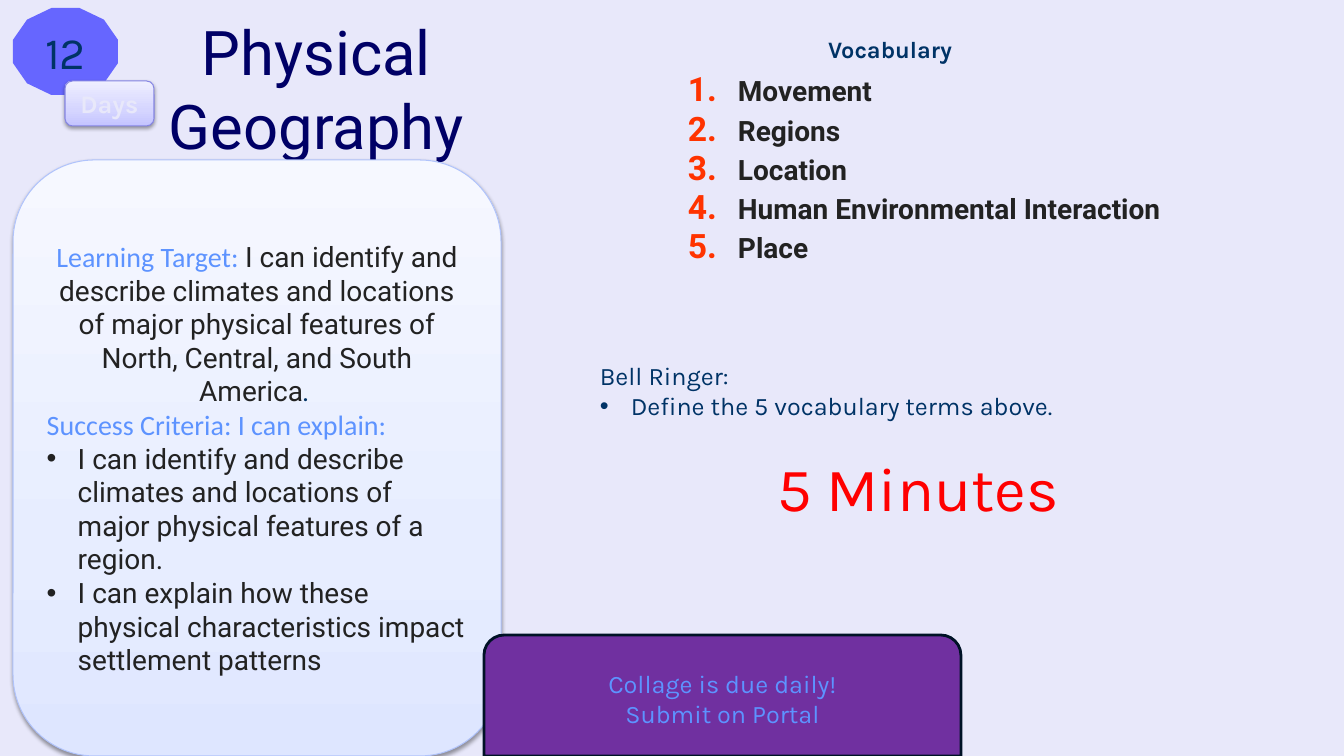
from lxml import etree
from pptx import Presentation
from pptx import util as u
from pptx.dml.color import RGBColor
from pptx.enum import shapes, text
from pptx.oxml.ns import qn

PX = 914400 / 100.8
SLIDE = (1344, 756)
NAVY, BLUE, INK, RED = "003366", "5D93FF", "222222", "FF0000"
CENTER, LEFT = text.PP_ALIGN.CENTER, text.PP_ALIGN.LEFT
TOP, MIDDLE, BOTTOM = (text.MSO_ANCHOR.TOP, text.MSO_ANCHOR.MIDDLE,
                       text.MSO_ANCHOR.BOTTOM)
DOT = {"indent": 31, "tags": [("buFont", {"typeface": "Arial"}), ("buChar", {"char": "•"})]}
NUMBER = {"indent": 50, "color": "FF3300",
          "tags": [("buSzPct", {"val": "120000"}), ("buFont", {"typeface": "+mj-lt"}),
                   ("buAutoNum", {"type": "arabicPeriod"})]}

# A run is (text, size, font, colour, bold); a paragraph is
# (runs, alignment, space before in points, bullet).
TITLE = [([("Physical Geography", 44, "Roboto", "000066", False)], CENTER, 0, None)]
DAY_COUNT = [([("12", 32, "Karla", NAVY, False)], CENTER, 0, None)]
DAYS = [([("Days", 18, "Karla", "E8E8FA", True)], CENTER, 0, None)]
VOCABULARY = [([("Vocabulary", 16.8, "Karla", NAVY, True)], CENTER, 3, None)]
TERMS = [([(term, 20, "Roboto", INK, True)], LEFT, 4, NUMBER)
         for term in ("Movement", "Regions", "Location",
                      "Human Environmental Interaction", "Place")]
GOALS = [
    ([("Learning Target: ", 20, "Calibri", BLUE, False),
      ("I can identify and describe climates and locations of major physical "
       "features of North, Central, and South America", 20, "Roboto", INK, False),
      (". ", 20, "Karla", NAVY, False)], CENTER, 0, None),
    ([("Success Criteria: I can explain:", 20, "Calibri", BLUE, False)], LEFT, 0, None),
] + [([(goal, 20, "Roboto", INK, False)], LEFT, 0, DOT) for goal in (
    "I can identify and describe climates and locations of major physical "
    "features of a region.",
    "I can explain how these physical characteristics impact settlement patterns")]
REMINDER = [([(line, 18, "Karla", BLUE, False)], CENTER, 0, None)
            for line in ("Collage is due daily!", "Submit on Portal")]
BELL_RINGER = [
    ([("Bell Ringer:", 18, "Karla", NAVY, False)], LEFT, 0, None),
    ([("Define the 5 vocabulary terms above.", 18, "Karla", NAVY, False)], LEFT, 0, DOT),
    ([("5 Minutes ", 44, "Karla", RED, False)], CENTER, 21, None),
]

# (preset, box, fill or gradient stops, line, paragraphs)
SHAPES = [
    ("DODECAGON", (13, 8, 105, 87), "6666FF", None, DAY_COUNT),
    ("ROUNDED_RECTANGLE", (65, 81, 89, 45),
     [(0, "C4C4FF"), (35, "D5D5FF"), (100, "EFEFFF")], ("8585E4", 0.75), DAYS),
    ("ROUNDED_RECTANGLE", (13, 160, 488, 596),
     [(0, "DEE6FF"), (35, "E7EDFF"), (100, "F6F8FF")], ("B0C3FB", 0.75), GOALS),
    ("ROUND_2_SAME_RECTANGLE", (484, 635, 477, 121), "7030A0", ("001226", 2), REMINDER),
]
TITLE_BOX = (44, 33, 545, 110)
TEXTS = [
    ((664, 34, 452, 34), BOTTOM, VOCABULARY),
    ((678, 69, 528, 244), TOP, TERMS),
    ((590, 355, 671, 176), TOP, BELL_RINGER),
]


def rgb(value):
    return RGBColor.from_string(value)


def emu(box):
    return [u.Emu(round(n * PX)) for n in box]


def child(parent, tag, **attrs):
    return etree.SubElement(parent, qn("a:" + tag), attrs)


def add_bullet(p, bullet):
    pPr = p._p.get_or_add_pPr()
    indent = round(bullet["indent"] * PX)
    pPr.set("marL", str(indent))
    pPr.set("indent", str(-indent))
    if "color" in bullet:
        child(child(pPr, "buClr"), "srgbClr", val=bullet["color"])
    for tag, attrs in bullet["tags"]:
        child(pPr, tag, **attrs)


def write(tf, paragraphs, anchor):
    tf.word_wrap = True
    tf.auto_size = text.MSO_AUTO_SIZE.NONE
    tf.vertical_anchor = anchor
    for i, (runs, align, before, bullet) in enumerate(paragraphs):
        p = tf.add_paragraph() if i else tf.paragraphs[0]
        p.alignment = align
        p.space_before = u.Pt(before)
        if bullet:
            add_bullet(p, bullet)
        for words, size, font, color, bold in runs:
            r = p.add_run()
            r.text = words
            r.font.size, r.font.name, r.font.bold = u.Pt(size), font, bold
            r.font.color.rgb = rgb(color)


def paint_gradient(sp, stops):
    """Fill upwards through the stops and add a soft shadow below."""
    sp.fill.gradient()
    sp.fill.gradient_angle = 90
    spPr = sp._element.spPr
    stop_list = spPr.find(".//" + qn("a:gsLst"))
    for old in list(stop_list):
        stop_list.remove(old)
    for percent, color in stops:
        child(child(stop_list, "gs", pos=str(percent * 1000)), "srgbClr", val=color)
    shadow = child(spPr.find(qn("a:effectLst")), "outerShdw", blurRad=str(u.Pt(3.1)),
                   dist=str(u.Pt(1.6)), dir="5400000", rotWithShape="0")
    child(child(shadow, "srgbClr", val="000000"), "alpha", val="38000")


def add_panel(s, preset, box, fill, line, paragraphs):
    sp = s.shapes.add_shape(getattr(shapes.MSO_SHAPE, preset), *emu(box))
    sp.shadow.inherit = False
    if line:
        sp.line.color.rgb = rgb(line[0])
        sp.line.width = u.Pt(line[1])
    else:
        sp.line.fill.background()
    if isinstance(fill, str):
        sp.fill.solid()
        sp.fill.fore_color.rgb = rgb(fill)
    else:
        paint_gradient(sp, fill)
    write(sp.text_frame, paragraphs, MIDDLE)


def main():
    prs = Presentation()
    prs.slide_width, prs.slide_height = emu(SLIDE)
    s = prs.slides.add_slide(prs.slide_layouts[5])
    s.background.fill.solid()
    s.background.fill.fore_color.rgb = rgb("E8E8FA")
    title = s.shapes.title
    title.left, title.top, title.width, title.height = emu(TITLE_BOX)
    write(title.text_frame, TITLE, MIDDLE)
    for panel in SHAPES:
        add_panel(s, *panel)
    for box, anchor, paragraphs in TEXTS:
        write(s.shapes.add_textbox(*emu(box)).text_frame, paragraphs, anchor)
    prs.save("out.pptx")


if __name__ == "__main__":
    main()
